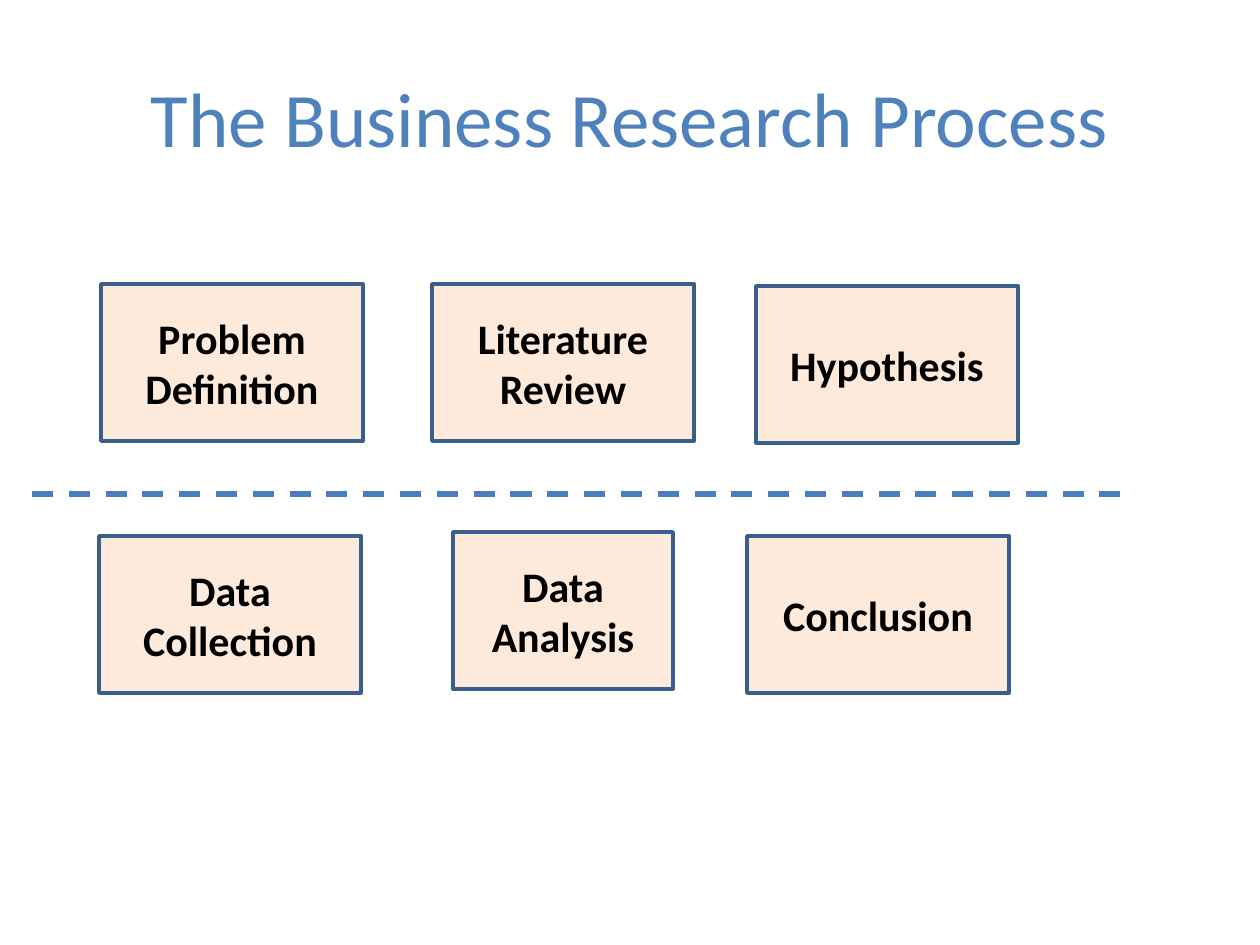
"""Build the business research process slide: six step boxes split by a dashed line."""
from dataclasses import dataclass

from pptx import Presentation
from pptx import util as u
from pptx.dml.color import RGBColor
from pptx.enum import dml, shapes, text
from pptx.oxml.ns import qn
from lxml import etree


@dataclass(frozen=True)
class Theme:
    font: str = "Calibri"
    title: str = "4F81BD"
    ink: str = "000000"
    fill: str = "FDEADA"
    border: str = "3A5F8C"
    divider: str = "4B7EBC"
    title_size: int = 44
    step_size: int = 24


theme = Theme()
SCALE = 914400 / 126


def px(*lengths):
    return [u.Emu(round(length * SCALE)) for length in lengths]


def write(shape, words, size, color, bold=False):
    frame = shape.text_frame
    frame.word_wrap = True
    frame.vertical_anchor = text.MSO_ANCHOR.MIDDLE
    frame.text = words
    para = frame.paragraphs[0]
    para.alignment = text.PP_ALIGN.CENTER
    span = para.runs[0]
    span.font.name = theme.font
    span.font.size = u.Pt(size)
    span.font.bold = bold
    span.font.color.rgb = RGBColor.from_string(color)


deck = Presentation()
deck.slide_width, deck.slide_height = px(1260, 945)
page = deck.slides.add_slide(deck.slide_layouts[6])

title = page.shapes.add_textbox(*px(63, 38, 1134, 158))
write(title, "The Business Research Process", theme.title_size, theme.title)

steps = [
    ("Problem Definition", 101, 284, 262),
    ("Literature Review", 432, 284, 262),
    ("Hypothesis", 756, 286, 262),
    ("Data Collection", 99, 536, 262),
    ("Data Analysis", 453, 532, 220),
    ("Conclusion", 747, 536, 262),
]
for words, left, top, width in steps:
    box = page.shapes.add_shape(shapes.MSO_SHAPE.RECTANGLE, *px(left, top, width, 157))
    box.shadow.inherit = False
    box.fill.solid()
    box.fill.fore_color.rgb = RGBColor.from_string(theme.fill)
    box.line.color.rgb = RGBColor.from_string(theme.border)
    box.line.width = u.Pt(2)
    write(box, words, theme.step_size, theme.ink, bold=True)

divider = page.shapes.add_connector(shapes.MSO_CONNECTOR.STRAIGHT, *px(32, 494, 1134, 494))
divider.line.color.rgb = RGBColor.from_string(theme.divider)
divider.line.width = u.Pt(3)
divider.line.dash_style = dml.MSO_LINE.DASH
etree.SubElement(divider._element.spPr, qn("a:effectLst"))

deck.save("out.pptx")
